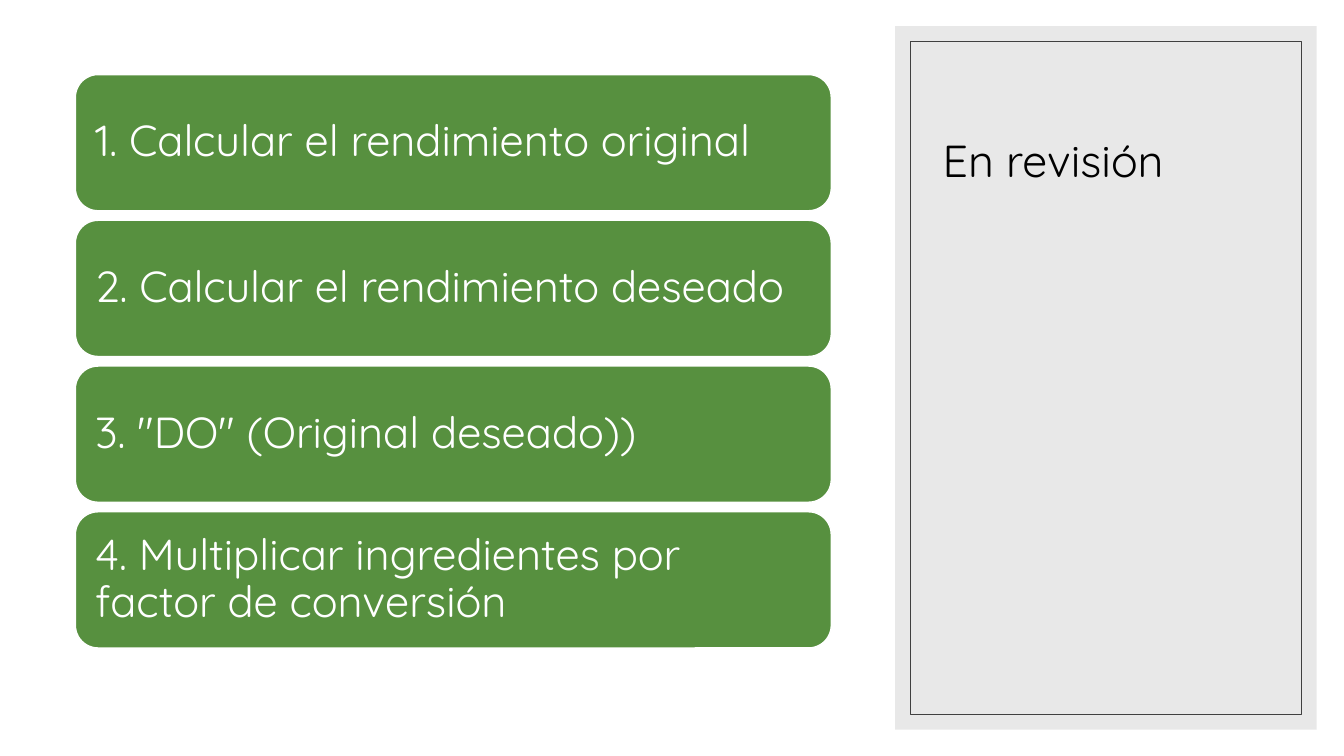
from lxml.etree import SubElement
from pptx import Presentation
from pptx.dml.color import RGBColor
from pptx.enum.shapes import MSO_SHAPE
from pptx.enum.text import MSO_ANCHOR, MSO_AUTO_SIZE, PP_ALIGN
from pptx.oxml.ns import qn
from pptx.util import Cm, Pt

GREEN = RGBColor(0x57, 0x90, 0x3F)
WHITE = RGBColor(0xFF, 0xFF, 0xFF)
BLACK = RGBColor(0x00, 0x00, 0x00)
PANEL_GREY = RGBColor(0xD9, 0xD9, 0xD9)
FRAME_GREY = RGBColor(0x40, 0x40, 0x40)
FONT = "Quicksand"

TITLE = "En revisión"
STEPS = [
    "1. Calcular el rendimiento original",
    "2. Calcular el rendimiento deseado",
    '3. "DO" (Original deseado))',
    "4. Multiplicar ingredientes por factor de conversión",
]


def add_box(slide, kind, left, top, width, height):
    sp = slide.shapes.add_shape(kind, Cm(left), Cm(top), Cm(width), Cm(height))
    sp.shadow.inherit = False
    return sp


def write_text(tf, text, size, color, anchor):
    tf.text = text
    tf.word_wrap = True
    tf.auto_size = MSO_AUTO_SIZE.NONE
    tf.vertical_anchor = anchor
    p = tf.paragraphs[0]
    p.alignment = PP_ALIGN.LEFT
    font = p.runs[0].font
    font.name = FONT
    font.size = Pt(size)
    font.color.rgb = color
    return p


def add_title_panel(slide, left, top, width, height):
    # Translucent panel
    panel = add_box(slide, MSO_SHAPE.RECTANGLE, left, top, width, height)
    panel.fill.solid()
    panel.fill.fore_color.rgb = PANEL_GREY
    color = panel.element.spPr.find(qn("a:solidFill"))[0]
    SubElement(color, qn("a:alpha"), val="60000")
    panel.line.fill.background()

    # Thin inner frame
    inset = 0.38
    frame = add_box(slide, MSO_SHAPE.RECTANGLE, left + inset, top + inset,
                    width - 2 * inset, height - 2 * inset)
    frame.fill.background()
    frame.line.color.rgb = FRAME_GREY
    frame.line.width = Pt(0.5)

    # Title, in front of the panel
    title = slide.shapes.title
    title.left, title.top = Cm(left + 0.94), Cm(top + 1.02)
    title.width, title.height = Cm(width - 1.83), Cm(4.57)
    tf = title.text_frame
    write_text(tf, TITLE, 32, BLACK, MSO_ANCHOR.BOTTOM)
    tf.margin_bottom = Cm(1.54)
    frame.element.addnext(title.element)


def add_steps(slide, left, top, width, height):
    gap = 0.24
    step_height = (height - gap * (len(STEPS) - 1)) / len(STEPS)
    for i, text in enumerate(STEPS):
        sp = add_box(slide, MSO_SHAPE.ROUNDED_RECTANGLE, left,
                     top + i * (step_height + gap), width, step_height)
        sp.fill.solid()
        sp.fill.fore_color.rgb = GREEN
        sp.line.color.rgb = WHITE
        sp.line.width = Pt(1)
        tf = sp.text_frame
        p = write_text(tf, text, 31, WHITE, MSO_ANCHOR.MIDDLE)
        p.line_spacing = 0.9
        # The rounded corners already inset the text a little
        tf.margin_left = tf.margin_right = Cm(0.33)
        tf.margin_top = tf.margin_bottom = Cm(0.33)


def main():
    prs = Presentation()
    prs.slide_width, prs.slide_height = Cm(33.87), Cm(19.05)
    slide = prs.slides.add_slide(prs.slide_layouts[5])
    add_title_panel(slide, 22.56, 0.66, 10.62, 17.73)
    add_steps(slide, 1.9, 1.88, 19.05, 14.45)
    prs.save("out.pptx")


if __name__ == "__main__":
    main()
